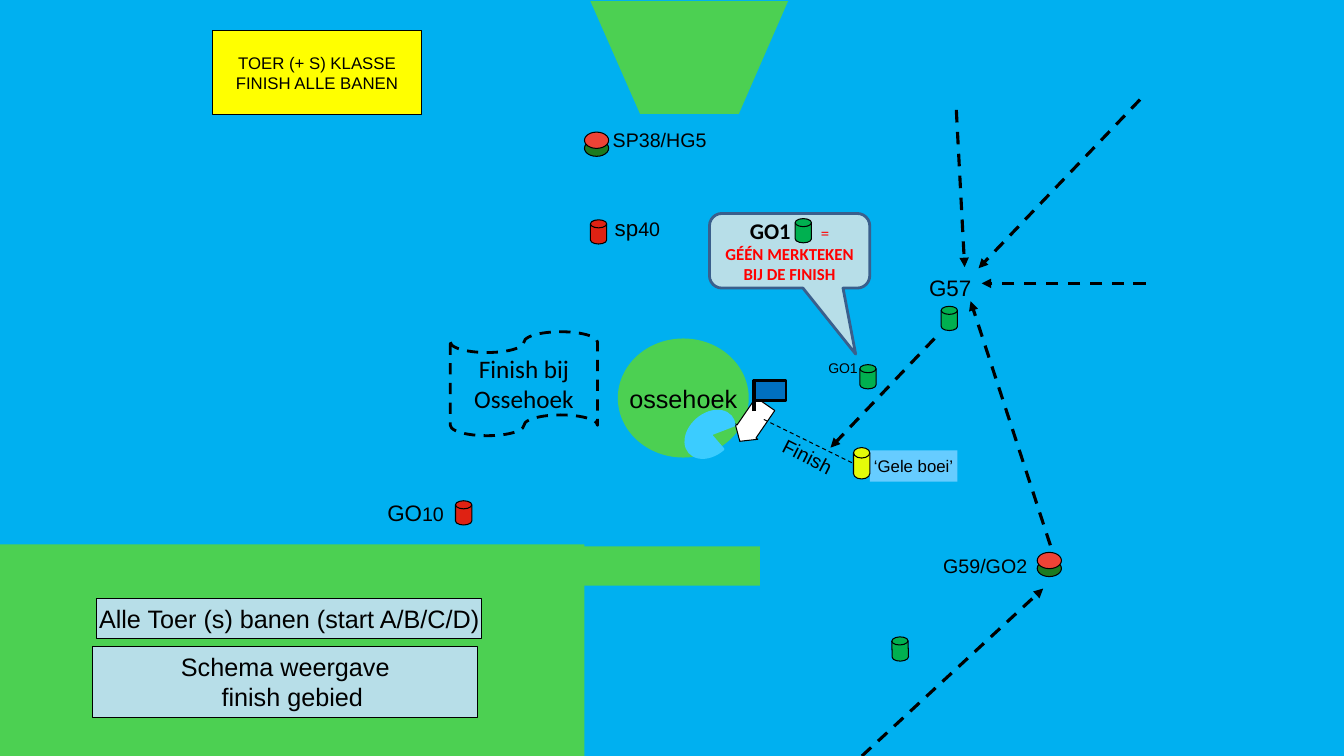
"""Build the slide with the finish area scheme at Ossehoek."""
from lxml.etree import SubElement
from pptx import Presentation
from pptx.dml.color import RGBColor
from pptx.enum.dml import MSO_LINE
from pptx.enum.shapes import MSO_CONNECTOR, MSO_SHAPE
from pptx.enum.text import MSO_ANCHOR, MSO_AUTO_SIZE, PP_ALIGN
from pptx.oxml.ns import qn
from pptx.util import Cm, Pt

WATER, LAND, PANEL = "00B0F0", "4CD052", "B7DEE8"
RED, GREEN, BLACK = "DF2213", "00B050", "000000"
color = RGBColor.from_string

deck = Presentation()
deck.slide_width, deck.slide_height = Cm(33.87), Cm(19.05)
page = deck.slides.add_slide(deck.slide_layouts[5])
page.background.fill.solid()
page.background.fill.fore_color.rgb = color(WATER)


def draw(kind, place, fill, outline=None, width=0.75, angle=0, adjust=()):
    """Add a filled preset shape at left, top, width and height in cm."""
    shape = page.shapes.add_shape(kind, *[Cm(value) for value in place])
    shape.shadow.inherit = False
    shape.rotation = angle
    shape.fill.solid()
    shape.fill.fore_color.rgb = color(fill)
    if outline:
        shape.line.color.rgb = color(outline)
        shape.line.width = Pt(width)
    else:
        shape.line.fill.background()
    for index, value in enumerate(adjust):
        shape.adjustments[index] = value
    return shape


def write(shape, lines, font="Arial", align=PP_ALIGN.CENTER, wrap=False):
    """Fill a shape with lines of (text, size, bold, colour) spans."""
    frame = shape.text_frame
    frame_format = {"word_wrap": wrap, "auto_size": MSO_AUTO_SIZE.NONE,
                    "vertical_anchor": MSO_ANCHOR.MIDDLE}
    for name, value in frame_format.items():
        setattr(frame, name, value)
    for number, spans in enumerate(lines):
        para = frame.add_paragraph() if number else frame.paragraphs[0]
        para.alignment = align
        for text, size, bold, ink in spans:
            span = para.add_run()
            span.text = text
            span_format = {"name": font, "size": Pt(size), "bold": bold}
            for name, value in span_format.items():
                setattr(span.font, name, value)
            span.font.color.rgb = color(ink)
    return frame


title = page.shapes.title
title_place = {"left": 5.36, "top": 0.76, "width": 5.26, "height": 2.13}
for name, value in title_place.items():
    setattr(title, name, Cm(value))
title.fill.solid()
title.fill.fore_color.rgb = color("FFFF00")
title.line.color.rgb = color(BLACK)
title.line.width = Pt(0.75)
write(title, [[("TOER (+ S) KLASSE", 12, False, BLACK)],
              [("FINISH ALLE BANEN", 12, False, BLACK)]])

draw(MSO_SHAPE.RECTANGLE, (3.86, 13.77, 15.29, 0.99), LAND)
draw(MSO_SHAPE.RECTANGLE, (0, 13.72, 14.73, 5.33), LAND)
island = draw(MSO_SHAPE.OVAL, (15.57, 8.53, 3.3, 3), LAND)
write(island, [[("ossehoek", 18, False, BLACK)]])

outline = page.shapes.build_freeform(Cm(14.88), Cm(0.03))
corners = [(16.13, 2.87), (18.62, 2.87), (19.86, 0.03)]
outline.add_line_segments([(Cm(x), Cm(y)) for x, y in corners], close=True)
headland = outline.convert_to_shape()
headland.shadow.inherit = False
headland.fill.solid()
headland.fill.fore_color.rgb = color(LAND)
headland.line.fill.background()

draw(MSO_SHAPE.UP_ARROW, (18.62, 10.08, 0.69, 1.14), "FFFFFF", BLACK,
     angle=214.4, adjust=(0.839, 0.434))
draw(MSO_SHAPE.PIE, (17.4, 10.26, 0.99, 1.37), "3BCCFF", "3BCCFF", 2,
     angle=49.1, adjust=(0, 173.896))
draw(MSO_SHAPE.RECTANGLE, (19, 9.58, 0.81, 0.51), "0070C0", BLACK, 2)

panels = [
    ((2.34, 16.28, 9.7, 1.8), PANEL, BLACK, 18, ["Schema weergave", "finish gebied"]),
    ((2.44, 15.09, 9.7, 0.99), PANEL, BLACK, 18, ["Alle Toer (s) banen (start A/B/C/D)"]),
    ((21.92, 11.35, 2.21, 0.79), "66CCFF", None, 12, ["‘Gele boei’"]),
]
for place, fill, border, size, lines in panels:
    panel = draw(MSO_SHAPE.RECTANGLE, place, fill, border)
    frame = write(panel, [[(line, size, False, BLACK)] for line in lines])
    for para in frame.paragraphs[1:]:
        para._p.get_or_add_pPr().set("marL", str(Pt(10)))

tape = draw(MSO_SHAPE.FLOWCHART_PUNCHED_TAPE, (11.35, 8.36, 3.71, 2.62), WATER, BLACK, 2)
tape.line.dash_style = MSO_LINE.DASH
write(tape, [[("Finish bij Ossehoek", 18, False, BLACK)]], "Calibri", wrap=True)

callout = draw(MSO_SHAPE.ROUNDED_RECTANGULAR_CALLOUT, (17.88, 5.38, 4.04, 1.88),
               PANEL, "3A5F8C", 2, adjust=(0.412, 1.385, 0.167))
frame = write(callout, [
    [("GO1", 16, True, BLACK), (" ", 12, False, GREEN), ("=", 12, False, "FF0000")],
    [("GÉÉN MERKTEKEN BIJ DE FINISH", 12, True, "FF0000")],
], "Calibri", wrap=True)
buoy_gap = frame.paragraphs[0].runs[1]
buoy_gap.font._element.set("spc", "1900")

labels = [
    ((15.06, 5.33, 2.01, 0.81), 0, PP_ALIGN.CENTER, [("sp", 16), ("40", 14)]),
    ((9.47, 12.52, 2.01, 0.81), 0, PP_ALIGN.CENTER, [("GO", 16), ("10", 14)]),
    ((22.94, 6.83, 2.01, 0.81), 0, PP_ALIGN.CENTER, [("G57", 16)]),
    ((20.24, 8.86, 2.01, 0.81), 0, PP_ALIGN.CENTER, [("GO1", 10)]),
    ((19.51, 11.23, 1.7, 0.53), 26.9, PP_ALIGN.CENTER, [("Finish", 14)]),
    ((15.47, 3.12, 2.59, 0.79), 0, PP_ALIGN.RIGHT, [("SP38/HG5", 14)]),
    ((23.55, 13.87, 2.59, 0.79), 0, PP_ALIGN.RIGHT, [("G59/GO2", 14)]),
]
for place, angle, align, spans in labels:
    box = page.shapes.add_textbox(*[Cm(value) for value in place])
    box.rotation = angle
    write(box, [[(text, size, False, BLACK) for text, size in spans]], align=align)

buoys = [
    (14.88, 5.54, 0.61, RED, 0),
    (11.48, 12.62, 0.61, RED, 0),
    (21.51, 11.28, 0.79, "E4FB09", 0),
    (22.48, 16.05, 0.61, GREEN, 358.3),
    (23.72, 7.72, 0.61, GREEN, 0),
    (21.67, 9.19, 0.61, GREEN, 0),
    (20.04, 5.51, 0.61, GREEN, 0),
]
for left, top, height, fill, angle in buoys:
    draw(MSO_SHAPE.FLOWCHART_MAGNETIC_DISK, (left, top, 0.41, height), fill, BLACK, angle=angle)

for left, top in [(14.73, 3.33), (26.14, 13.92)]:
    for drop, fill in [(0.2, "1B7B20"), (0, "EE4336")]:
        draw(MSO_SHAPE.OVAL, (left, top + drop, 0.61, 0.41), fill, BLACK)

finish_line = (19.25, 10.57, 21.51, 11.68)
flag_pole = (19, 10.36, 19, 9.58)
routes = [
    (23.55, 8.53, 20.93, 11.28),
    (26.47, 13.74, 24.46, 7.59),
    (21.72, 19.05, 26.29, 14.83),
    (24.1, 2.77, 24.31, 6.73),
    (28.88, 7.14, 24.74, 7.14),
    (28.73, 2.51, 24.66, 6.76),
]
strokes = [(finish_line, 0.75, True, False), (flag_pole, 3, False, False)]
strokes += [(route, 2.25, True, True) for route in routes]
for ends, width, dashed, arrow in strokes:
    stroke = page.shapes.add_connector(MSO_CONNECTOR.STRAIGHT, *[Cm(value) for value in ends])
    stroke.line.color.rgb = color(BLACK)
    stroke.line.width = Pt(width)
    if dashed:
        stroke.line.dash_style = MSO_LINE.DASH
    if arrow:
        SubElement(stroke.get_or_add_ln(), qn("a:tailEnd"), type="triangle")
    SubElement(stroke._element.spPr, qn("a:effectLst"))

deck.save("out.pptx")
